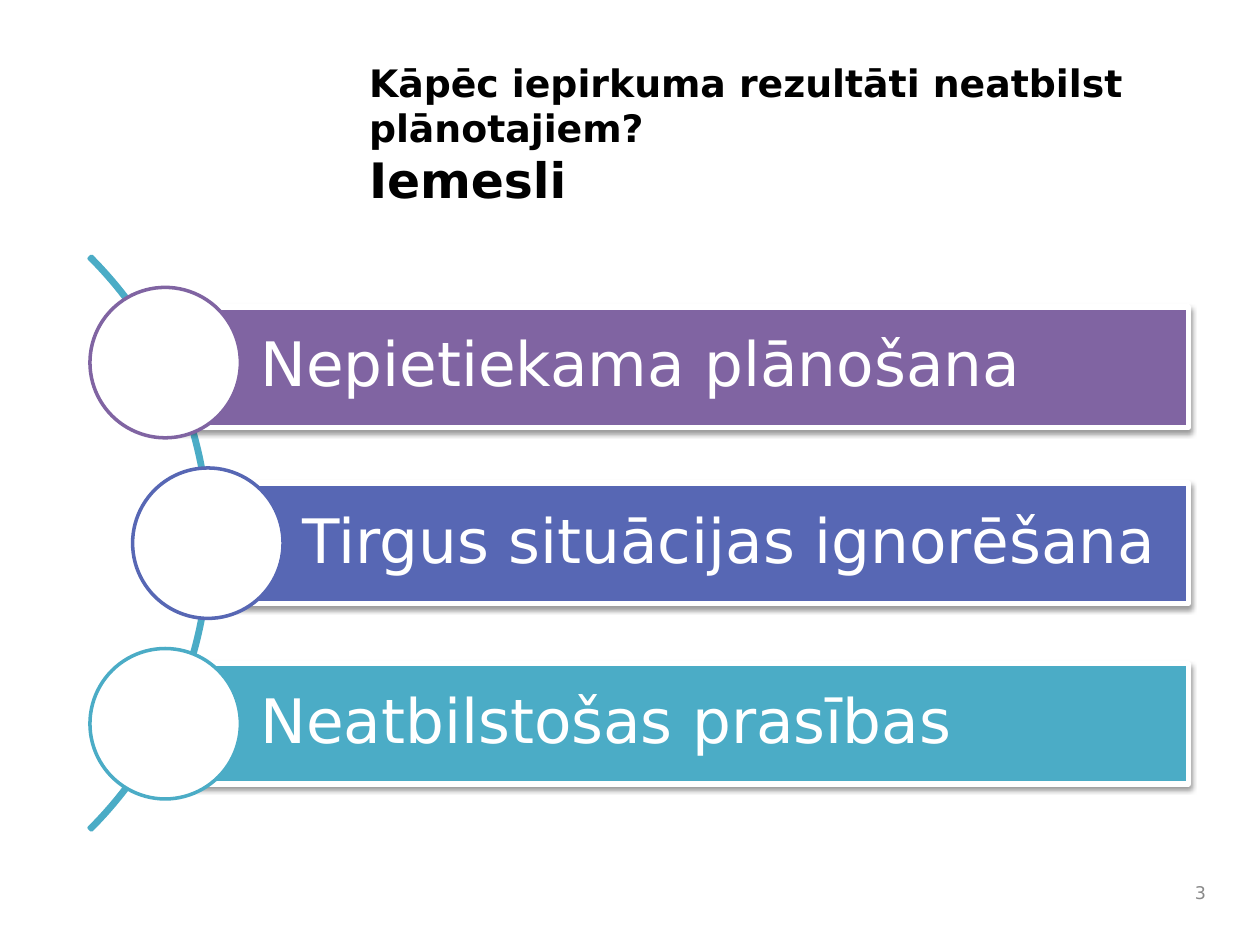
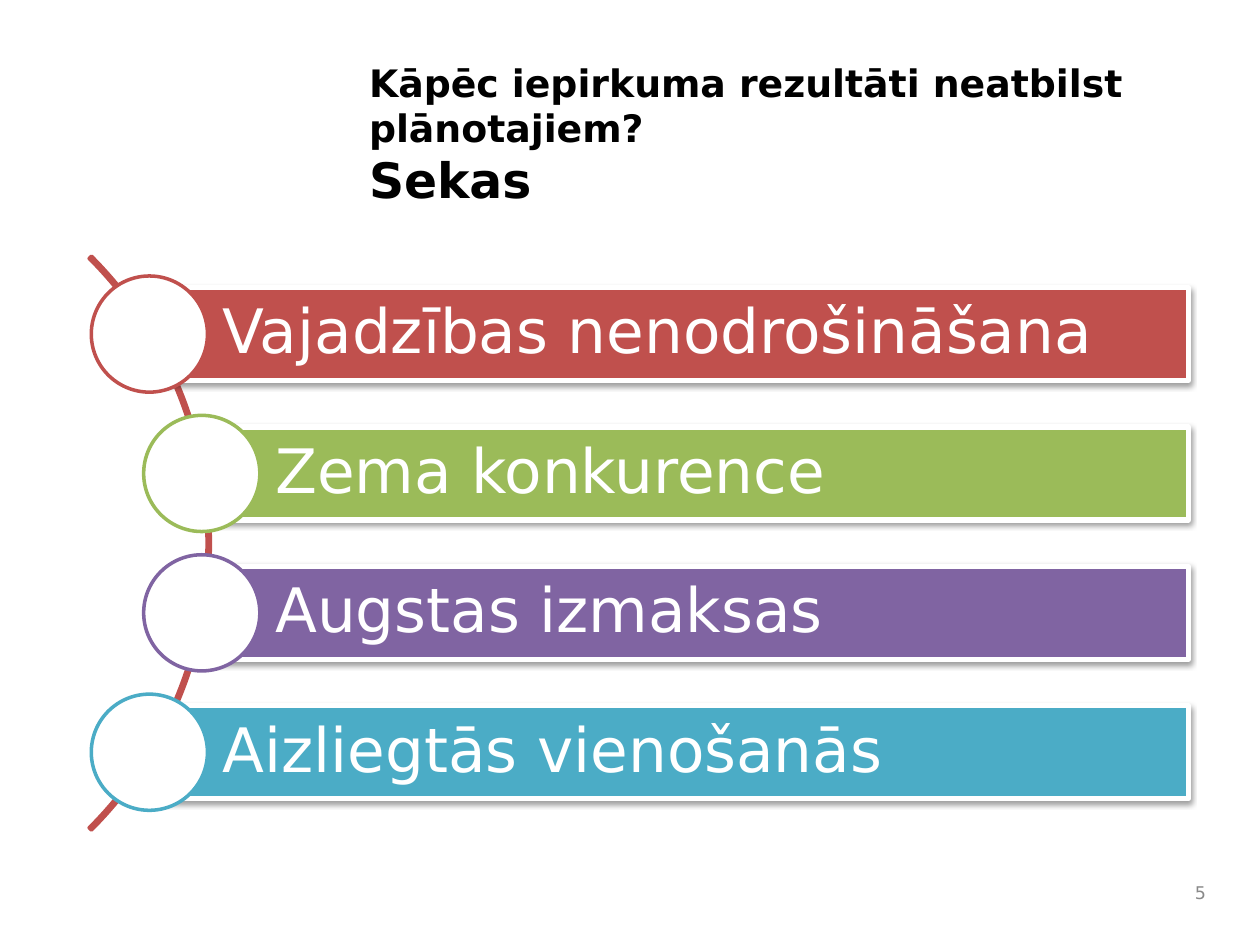
"""Build two slides of curved lists: reasons and consequences of poor procurement results."""
import math

from lxml import etree
from pptx import Presentation
from pptx.dml.color import RGBColor
from pptx.enum.shapes import MSO_SHAPE
from pptx.enum.text import MSO_ANCHOR, PP_ALIGN
from pptx.oxml.ns import qn
from pptx.util import Cm, Pt

ARC, BAR, CIRCLE = MSO_SHAPE.BLOCK_ARC, MSO_SHAPE.RECTANGLE, MSO_SHAPE.OVAL
TOP, MIDDLE = MSO_ANCHOR.TOP, MSO_ANCHOR.MIDDLE
LEFT, RIGHT = PP_ALIGN.LEFT, PP_ALIGN.RIGHT

FONT = "DejaVu Sans"
COLORS = {
    "black": "000000", "white": "FFFFFF", "grey": "898989",
    "purple": "8064A2", "indigo": "5767B4", "teal": "4BACC6",
    "red": "C0504D", "green": "9BBB59",
}
QUESTION = "Kāpēc iepirkuma rezultāti neatbilst plānotajiem?"
SLIDES = [
    {
        "topic": "Iemesli", "number": "3", "arc": "teal", "pitch": 3.64, "first_bar_drop": 0.09,
        "items": [
            ("Nepietiekama plānošana", "purple"),
            ("Tirgus situācijas ignorēšana", "indigo"),
            ("Neatbilstošas prasības", "teal"),
        ],
    },
    {
        "topic": "Sekas", "number": "5", "arc": "red", "pitch": 2.81, "first_bar_drop": 0,
        "items": [
            ("Vajadzības nenodrošināšana", "red"),
            ("Zema konkurence", "green"),
            ("Augstas izmaksas", "purple"),
            ("Aizliegtās vienošanās", "teal"),
        ],
    },
]

ARC_X, ARC_Y, ARC_SIZE = -3.94, 10.95, 16.36
ITEM_RADIUS = 8.13
BAR_RIGHT = 23.96


def rgb(name):
    return RGBColor.from_string(COLORS[name])


def add_run(p, text, size, color, bold=False):
    r = p.add_run()
    r.text = text
    r.font.name, r.font.size, r.font.bold = FONT, Pt(size), bold
    r.font.color.rgb = rgb(color)


def set_frame(tf, anchor, left, right, vertical):
    tf.word_wrap = True
    tf.vertical_anchor = anchor
    tf.margin_left, tf.margin_right = Cm(left), Cm(right)
    tf.margin_top = tf.margin_bottom = Cm(vertical)


def add_text(s, box, anchor, align):
    tf = s.shapes.add_textbox(*map(Cm, box)).text_frame
    set_frame(tf, anchor, 0.25, 0.25, 0.13)
    p = tf.paragraphs[0]
    p.alignment = align
    return p


def add_shape(s, kind, box, fill, line, width):
    sp = s.shapes.add_shape(kind, *map(Cm, box))
    sp.shadow.inherit = False
    if fill:
        sp.fill.solid()
        sp.fill.fore_color.rgb = rgb(fill)
    else:
        sp.fill.background()
    sp.line.color.rgb = rgb(line)
    sp.line.width = Pt(width)
    return sp


def add_shadow(sp):
    effects = sp._element.spPr.find(qn("a:effectLst"))
    shadow = etree.SubElement(effects, qn("a:outerShdw"), blurRad="40000", dist="20000",
                              dir="5400000", rotWithShape="0")
    color = etree.SubElement(shadow, qn("a:srgbClr"), val=COLORS["black"])
    etree.SubElement(color, qn("a:alpha"), val="38000")


def add_item(s, text, color, x, y, diameter, drop):
    height = 0.8 * diameter
    bar = add_shape(s, BAR, (x, y - height / 2 + drop, BAR_RIGHT - x, height), color, "white", 3)
    add_shadow(bar)
    set_frame(bar.text_frame, MIDDLE, 0.79 * height, 0.25, 0.25)
    p = bar.text_frame.paragraphs[0]
    p.alignment = LEFT
    p.line_spacing = 0.9
    add_run(p, text, 35, "white")
    add_shape(s, CIRCLE, (x - diameter / 2, y - diameter / 2, diameter, diameter),
              "white", color, 2)


def add_curved_list(s, data):
    half = ARC_SIZE / 2
    arc = add_shape(s, ARC, (ARC_X - half, ARC_Y - half, ARC_SIZE, ARC_SIZE),
                    None, data["arc"], 2)
    for i, value in enumerate((189, 27, 0.004)):
        arc.adjustments[i] = value
    middle = (len(data["items"]) - 1) / 2
    for i, (text, color) in enumerate(data["items"]):
        dy = (i - middle) * data["pitch"]
        x = ARC_X + math.sqrt(ITEM_RADIUS ** 2 - dy ** 2)
        drop = data["first_bar_drop"] if i == 0 else 0
        add_item(s, text, color, x, ARC_Y + dy, data["pitch"] / 1.2, drop)


def add_slide(prs, data):
    s = prs.slides.add_slide(prs.slide_layouts[6])
    p = add_text(s, (7.19, 1.07, 16.94, 2.87), TOP, LEFT)
    add_run(p, QUESTION, 21.6, "black", True)
    p.add_line_break()
    add_run(p, data["topic"], 27.9, "black", True)
    add_curved_list(s, data)
    p = add_text(s, (23.39, 17.58, 1.17, 0.84), MIDDLE, RIGHT)
    add_run(p, data["number"], 10, "grey")


def main():
    prs = Presentation()
    prs.slide_width, prs.slide_height = Cm(25.4), Cm(19.05)
    for data in SLIDES:
        add_slide(prs, data)
    prs.save("out.pptx")


if __name__ == "__main__":
    main()
